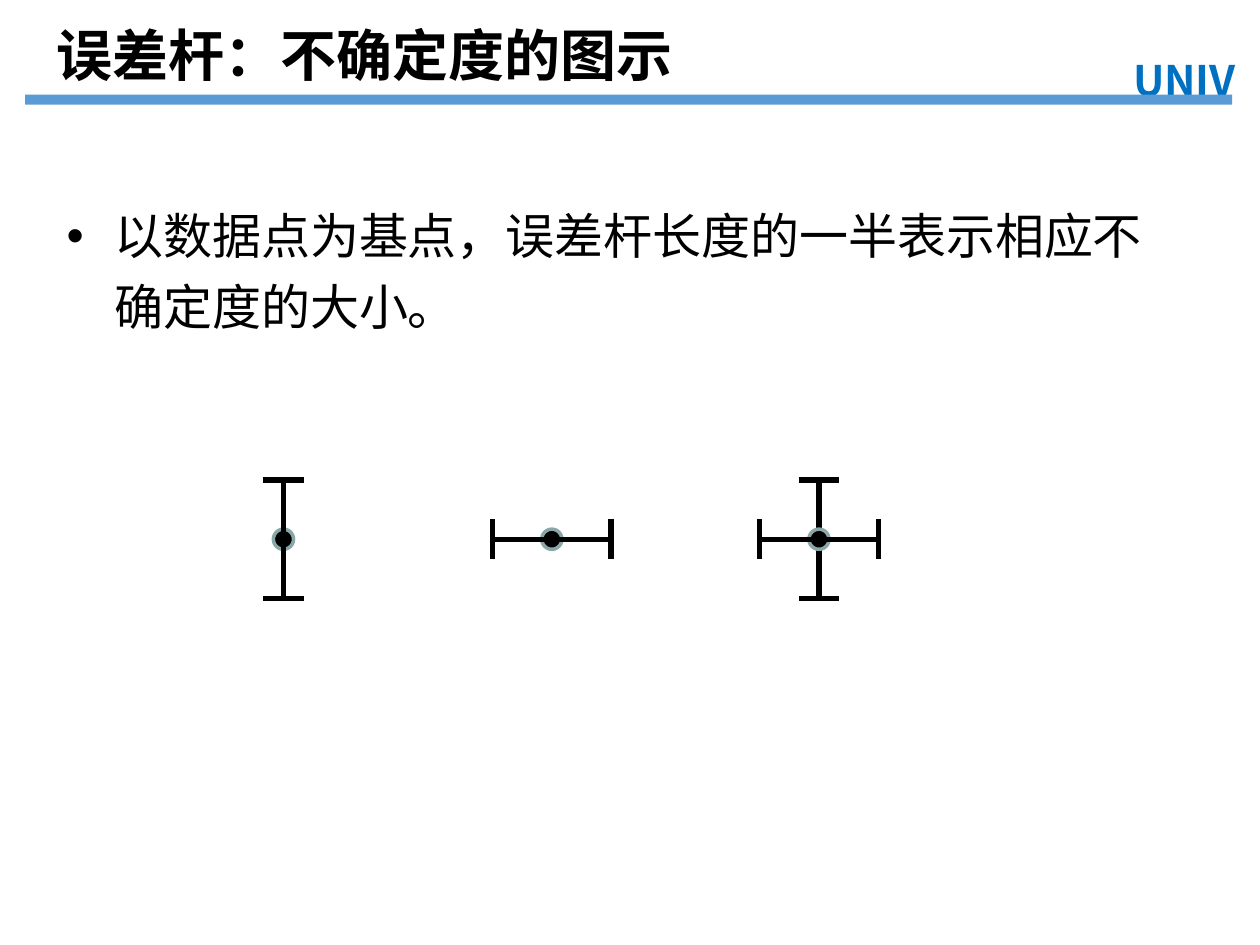
"""Build a slide that shows error bars as a picture of uncertainty."""
from dataclasses import dataclass

from lxml.etree import SubElement
from pptx import Presentation
from pptx.dml.color import RGBColor
from pptx.enum.shapes import MSO_CONNECTOR, MSO_SHAPE
from pptx.enum.text import MSO_ANCHOR, MSO_AUTO_SIZE, PP_ALIGN
from pptx.oxml.ns import qn
from pptx.util import Inches, Pt

BLACK = RGBColor(0x00, 0x00, 0x00)
BLUE = RGBColor(0x00, 0x70, 0xC0)
RULE_BLUE = RGBColor(0x5B, 0x9B, 0xD5)
RING_GREY = RGBColor(0x8A, 0xA6, 0xA8)
CJK_FONT = "Noto Sans CJK SC"
CENTER_Y = 4.28
HALF_LENGTH = 0.47
HALF_CAP = 0.16
RADIUS = 0.08


@dataclass(frozen=True)
class ErrorBar:
    center_x: float
    layers: tuple[str, ...]


ERROR_BARS = (
    ErrorBar(2.25, ("point", "vertical")),
    ErrorBar(4.38, ("point", "horizontal")),
    ErrorBar(6.5, ("vertical", "point", "horizontal")),
)


def place(shape, left: float, top: float, width: float, height: float) -> None:
    shape.left, shape.top = Inches(left), Inches(top)
    shape.width, shape.height = Inches(width), Inches(height)


def write(shape, text: str, size: int, color: RGBColor, latin: str = CJK_FONT,
          bold: bool = False, wrap: bool = True, **paragraph_format) -> None:
    frame = shape.text_frame
    frame_format = {"word_wrap": wrap, "auto_size": MSO_AUTO_SIZE.NONE,
                    "vertical_anchor": MSO_ANCHOR.TOP}
    for name, value in frame_format.items():
        setattr(frame, name, value)
    paragraph = frame.paragraphs[0]
    for name, value in paragraph_format.items():
        setattr(paragraph, name, value)
    run = paragraph.add_run()
    run.text = text
    for name, value in {"name": latin, "size": Pt(size), "bold": bold}.items():
        setattr(run.font, name, value)
    run.font.color.rgb = color
    SubElement(run.font._element, qn("a:ea"), typeface=CJK_FONT)


def add_bullet(paragraph) -> None:
    properties = paragraph._p.get_or_add_pPr()
    properties.set("marL", str(Inches(0.38)))
    properties.set("indent", str(Inches(-0.38)))
    SubElement(properties, qn("a:buFont"), typeface="Arial")
    SubElement(properties, qn("a:buChar"), char="•")


def add_line(slide, start: tuple[float, float], end: tuple[float, float]) -> None:
    points = [Inches(value) for value in (*start, *end)]
    connector = slide.shapes.add_connector(MSO_CONNECTOR.STRAIGHT, *points)
    connector.line.color.rgb = BLACK
    connector.line.width = Pt(3)
    SubElement(connector._element.spPr, qn("a:effectLst"))


def add_point(slide, center_x: float) -> None:
    point = slide.shapes.add_shape(
        MSO_SHAPE.OVAL, Inches(center_x - RADIUS), Inches(CENTER_Y - RADIUS),
        Inches(2 * RADIUS), Inches(2 * RADIUS))
    point.shadow.inherit = False
    point.fill.solid()
    point.fill.fore_color.rgb = BLACK
    point.line.color.rgb = RING_GREY
    point.line.width = Pt(2)


def add_bar(slide, center_x: float, vertical: bool) -> None:
    def locate(along: float, across: float) -> tuple[float, float]:
        shift_x, shift_y = (across, along) if vertical else (along, across)
        return center_x + shift_x, CENTER_Y + shift_y

    add_line(slide, locate(-HALF_LENGTH, 0), locate(HALF_LENGTH, 0))
    for end in (-HALF_LENGTH, HALF_LENGTH):
        add_line(slide, locate(end, -HALF_CAP), locate(end, HALF_CAP))


def add_error_bar(slide, error_bar: ErrorBar) -> None:
    for layer in error_bar.layers:
        if layer == "point":
            add_point(slide, error_bar.center_x)
        else:
            add_bar(slide, error_bar.center_x, layer == "vertical")


def main() -> None:
    presentation = Presentation()
    presentation.slide_width, presentation.slide_height = Inches(10), Inches(7.5)
    slide = presentation.slides.add_slide(presentation.slide_layouts[5])

    school = slide.shapes.add_textbox(0, 0, 0, 0)
    place(school, 8.6, 0.38, 1.6, 0.5)
    write(school, "UNIV", 24, BLUE, bold=True, alignment=PP_ALIGN.CENTER)

    rule = slide.shapes.add_shape(MSO_SHAPE.RECTANGLE, 0, 0, 0, 0)
    place(rule, 0.2, 0.75, 9.58, 0.08)
    rule.shadow.inherit = False
    rule.fill.solid()
    rule.fill.fore_color.rgb = RULE_BLUE
    rule.line.fill.background()

    title = slide.shapes.title
    place(title, 0.35, 0.15, 5.16, 0.61)
    write(title, "误差杆：不确定度的图示", 32, BLACK, bold=True, wrap=False,
          alignment=PP_ALIGN.LEFT, line_spacing=Pt(36))

    body = slide.shapes.add_textbox(0, 0, 0, 0)
    place(body, 0.43, 1.49, 9, 1.69)
    write(body, "以数据点为基点，误差杆长度的一半表示相应不确定度的大小。", 28, BLACK,
          latin="Arial", line_spacing=1.2, space_before=Pt(5.6))
    add_bullet(body.text_frame.paragraphs[0])

    for error_bar in ERROR_BARS:
        add_error_bar(slide, error_bar)
    presentation.save("out.pptx")


if __name__ == "__main__":
    main()
